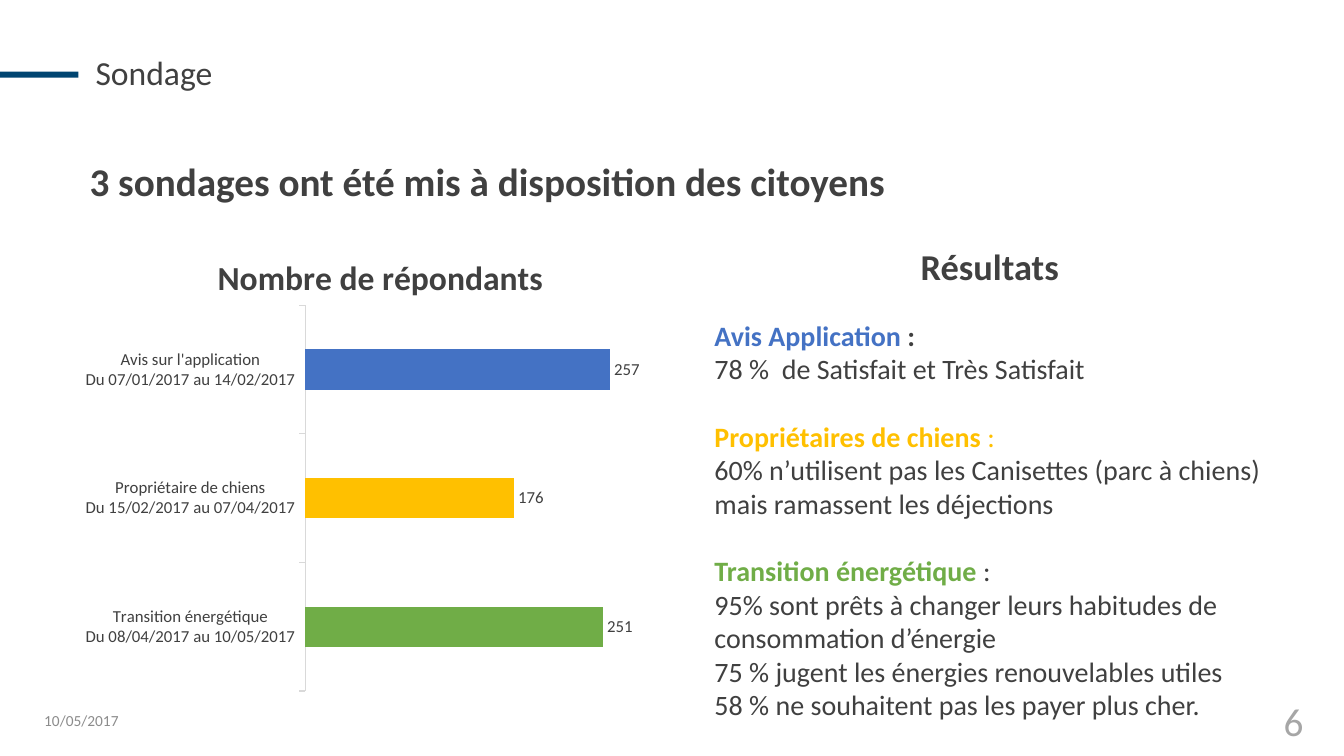
from pptx import Presentation
from pptx.chart.data import CategoryChartData
from pptx.dml.color import RGBColor
from pptx.enum.chart import XL_CHART_TYPE as Kind, XL_LABEL_POSITION as Spot
from pptx.enum.chart import XL_TICK_LABEL_POSITION as Place, XL_TICK_MARK as Tick
from pptx.enum.shapes import MSO_SHAPE as Form
from pptx.enum.text import MSO_ANCHOR as Anchor, PP_ALIGN as Align
from pptx.oxml import parse_xml
from pptx.oxml.ns import qn
from pptx.util import Pt

FACE = "Calibri"
HUES = {
    "navy": "004571", "text": "404040", "page": "A6A6A6", "date": "8C8C8C",
    "axis": "D9D9D9", "blue": "4472C4", "gold": "FFC000", "green": "70AD47",
}
POLLS = [
    ("Transition énergétique\nDu 08/04/2017 au 10/05/2017", 251, "green"),
    ("Propriétaire de chiens\nDu 15/02/2017 au 07/04/2017", 176, "gold"),
    ("Avis sur l'application\nDu 07/01/2017 au 14/02/2017", 257, "blue"),
]
NOTES = [
    ("Avis Application ", "blue", ":", "text", True,
     ["78 %  de Satisfait et Très Satisfait"]),
    ("Propriétaires de chiens ", "gold", ":", "gold", False,
     ["60% n’utilisent pas les Canisettes (parc à chiens) mais ramassent les déjections"]),
    ("Transition énergétique ", "green", ":", "text", False,
     ["95% sont prêts à changer leurs habitudes de consommation d’énergie",
      "75 % jugent les énergies renouvelables utiles",
      "58 % ne souhaitent pas les payer plus cher."]),
]


def tint(hue):
    return RGBColor.from_string(HUES[hue])


def style(font, size, hue="text", bold=False):
    font.name = FACE
    font.size = Pt(size)
    font.bold = bold
    font.color.rgb = tint(hue)


def add_run(para, text, size, hue="text", bold=False):
    run = para.add_run()
    run.text = text
    style(run.font, size, hue, bold)


def add_box(slide, box, anchor=Anchor.TOP):
    frame = slide.shapes.add_textbox(*map(Pt, box)).text_frame
    frame.word_wrap = True
    frame.vertical_anchor = anchor
    return frame


def add_line(slide, box, text, size, hue="text", bold=False,
             anchor=Anchor.MIDDLE, align=Align.LEFT, lead=1.0):
    para = add_box(slide, box, anchor).paragraphs[0]
    para.alignment = align
    para.line_spacing = lead
    add_run(para, text, size, hue, bold)


def add_head(slide, box):
    left, top, width, height = box
    bar = slide.shapes.add_shape(
        Form.RECTANGLE, Pt(left), Pt(top + 22.3), Pt(56), Pt(4.3))
    bar.shadow.inherit = False
    bar.fill.solid()
    bar.fill.fore_color.rgb = tint("navy")
    bar.line.fill.background()
    add_line(slide, (left + 61.2, top, width - 61.2, height), "Sondage", 24, lead=0.9)


def add_foot(slide, box):
    left, top, width, height = box
    add_line(slide, (left, top, 216, height), "10/05/2017", 11, "date")
    add_line(slide, (left + width - 216, top, 216, height), "6", 28, "page",
             align=Align.RIGHT)


def set_layout(node, spot, **sizes):
    for old in node.findall(qn("c:layout")):
        node.remove(old)
    modes = {"xMode": "edge", "yMode": "edge"}
    if "w" in sizes:
        modes = {"layoutTarget": "inner", **modes}
    parts = "".join(f'<c:{tag} val="{val}"/>' for tag, val in {**modes, **sizes}.items())
    node.insert(spot, parse_xml(
        '<c:layout xmlns:c="http://schemas.openxmlformats.org/drawingml/2006/chart">'
        f"<c:manualLayout>{parts}</c:manualLayout></c:layout>"))


def add_bars(slide, box):
    data = CategoryChartData()
    data.categories = [name for name, _, _ in POLLS]
    data.add_series("Series 1", [count for _, count, _ in POLLS])
    chart = slide.shapes.add_chart(Kind.BAR_CLUSTERED, *map(Pt, box), data).chart
    style(chart.font, 12)
    chart.has_legend = False
    chart.has_title = True
    title = chart.chart_title
    add_run(title.text_frame.paragraphs[0], "Nombre de répondants", 24, bold=True)
    title.include_in_layout = False
    set_layout(title._element, 1, x=0.23, y=0.04)
    set_layout(chart._chartSpace.chart.plotArea, 0, x=0.386, y=0.16, w=0.594, h=0.82)

    names = chart.category_axis
    names.major_tick_mark = Tick.OUTSIDE
    names.minor_tick_mark = Tick.NONE
    names.tick_label_position = Place.LOW
    names.format.line.color.rgb = tint("axis")
    names.format.line.width = Pt(0.75)
    style(names.tick_labels.font, 12)
    scale = chart.value_axis
    scale.minimum_scale = 0
    scale.maximum_scale = 300
    scale.has_major_gridlines = False
    scale.visible = False

    plot = chart.plots[0]
    plot.gap_width = 219
    plot.vary_by_categories = False
    series = plot.series[0]
    series.format.fill.solid()
    series.format.fill.fore_color.rgb = tint("blue")
    for spot, (_, _, hue) in enumerate(POLLS):
        fill = series.points[spot].format.fill
        fill.solid()
        fill.fore_color.rgb = tint(hue)
    labels = series.data_labels
    labels.show_value = True
    labels.position = Spot.OUTSIDE_END
    style(labels.font, 12)


def add_notes(slide, box):
    frame = add_box(slide, box)
    para = frame.paragraphs[0]
    para.alignment = Align.CENTER
    add_run(para, "Résultats", 26, bold=True)
    for name, hue, mark, shade, bold, lines in NOTES:
        para = frame.add_paragraph()
        para.space_before = Pt(22 if name == NOTES[0][0] else 24)
        add_run(para, name, 20, hue, True)
        add_run(para, mark, 20, shade, bold)
        for line in lines:
            add_run(frame.add_paragraph(), line, 20)


def main():
    deck = Presentation()
    deck.slide_width, deck.slide_height = Pt(960), Pt(540)
    slide = deck.slides.add_slide(deck.slide_layouts[6])
    add_head(slide, (0, 28.8, 766.8, 49))
    add_line(slide, (56.9, 113, 828, 365), "3 sondages ont été mis à disposition des citoyens",
             28, bold=True, anchor=Anchor.TOP, lead=0.9)
    add_foot(slide, (24.5, 500.4, 913.7, 28.8))
    add_bars(slide, (52.6, 164.2, 428.4, 336.2))
    add_notes(slide, (503.3, 170.6, 407.5, 352.8))
    deck.save("out.pptx")


if __name__ == "__main__":
    main()
